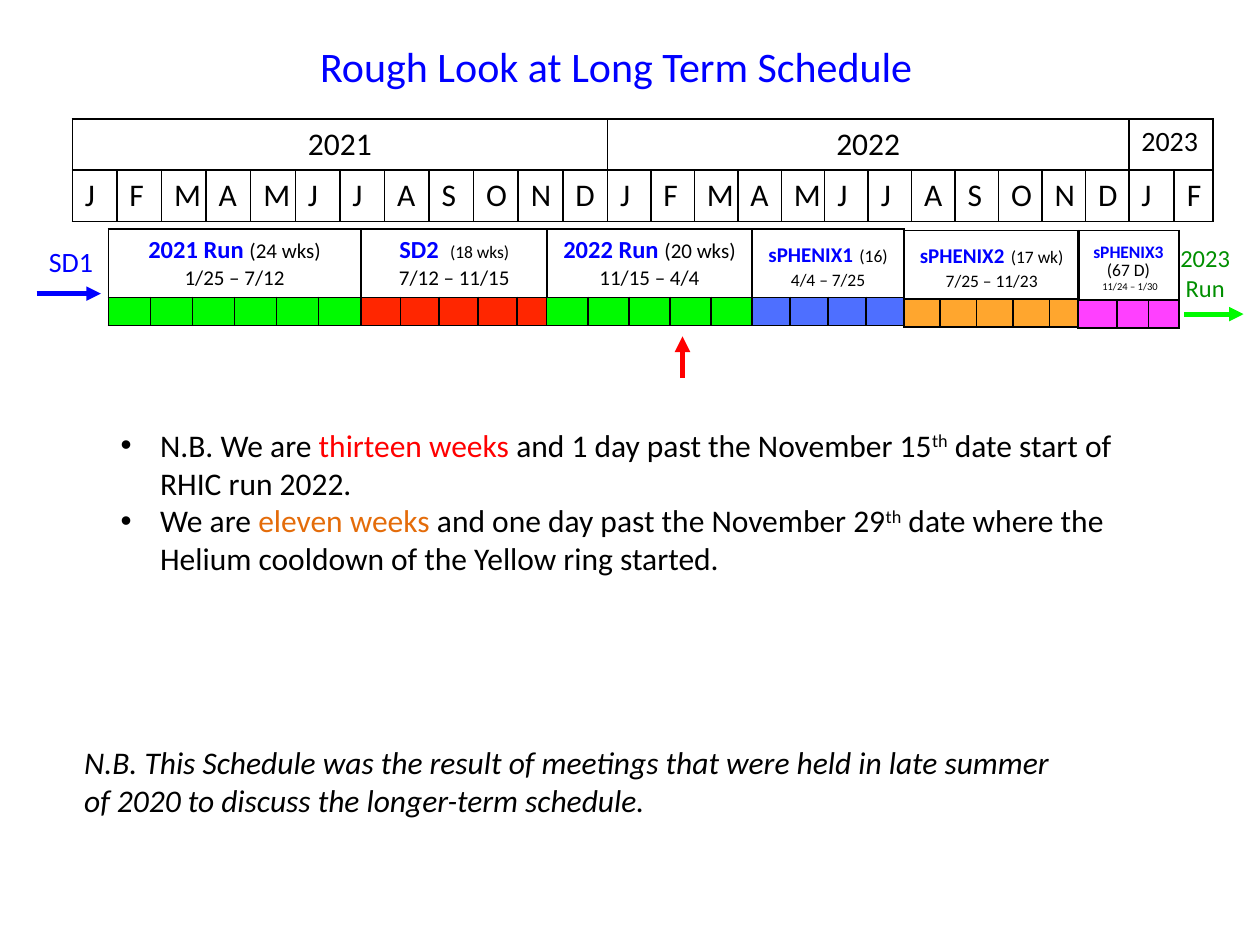
from lxml import etree
from pptx import Presentation
from pptx.dml.color import RGBColor
from pptx.enum.shapes import MSO_CONNECTOR
from pptx.enum.text import MSO_ANCHOR, PP_ALIGN
from pptx.oxml.ns import qn
from pptx.util import Pt

STRAIGHT = MSO_CONNECTOR.STRAIGHT
LEFT, CENTER = PP_ALIGN.LEFT, PP_ALIGN.CENTER
MIDDLE = MSO_ANCHOR.MIDDLE

THEME = {
    "font": "Calibri",
    "colors": {
        "black": "000000", "blue": "0000FF", "red": "FF0000",
        "orange": "E46C0A", "dark green": "008F00", "run": "00FA00",
        "shutdown": "FF2600", "sphenix1": "0432FF", "sphenix2": "FF9300",
        "sphenix3": "FF40FF",
    },
    "sizes": {
        "title": 24, "body": 18, "label": 16, "heading": 14,
        "detail": 12, "small": 10, "space": 8, "tiny": 6,
    },
}
COLORS = {name: RGBColor.from_string(value) for name, value in THEME["colors"].items()}
SIZES = {name: Pt(value) for name, value in THEME["sizes"].items()}


def write(text_frame, lines, paragraph_format):
    for index, runs in enumerate(lines):
        paragraph = text_frame.paragraphs[0] if index == 0 else text_frame.add_paragraph()
        for name, value in paragraph_format.items():
            setattr(paragraph, name, value)
        for text, size, color, *styles in runs:
            run = paragraph.add_run()
            run.text = text
            font_format = {
                "name": THEME["font"], "size": SIZES[size],
                "bold": "bold" in styles, "italic": "italic" in styles,
            }
            for name, value in font_format.items():
                setattr(run.font, name, value)
            run.font.color.rgb = COLORS[color]
            if "superscript" in styles:
                run.font._element.set("baseline", "30000")


def add_grid(left, top, widths, heights):
    table = slide.shapes.add_table(
        len(heights), len(widths), Pt(left), Pt(top), Pt(sum(widths)), Pt(sum(heights))
    ).table
    table.first_row = table.horz_banding = False
    for column, width in zip(table.columns, widths):
        column.width = Pt(width)
    for row, height in zip(table.rows, heights):
        row.height = Pt(height)
    for cell in table.iter_cells():
        properties = cell._tc.get_or_add_tcPr()
        for side in ("a:lnL", "a:lnR", "a:lnT", "a:lnB"):
            border = etree.SubElement(properties, qn(side), w=str(Pt(1)))
            fill = etree.SubElement(border, qn("a:solidFill"))
            etree.SubElement(fill, qn("a:srgbClr"), val=THEME["colors"]["black"])
        cell.fill.background()
    return table


presentation = Presentation()
presentation.slide_width, presentation.slide_height = Pt(720), Pt(540)
slide = presentation.slides.add_slide(presentation.slide_layouts[5])

title = slide.shapes.title
title_format = {"left": Pt(175.7), "top": Pt(19.4), "width": Pt(369.4), "height": Pt(36)}
for name, value in title_format.items():
    setattr(title, name, value)
title.text_frame.vertical_anchor = MIDDLE
write(title.text_frame, [[("Rough Look at Long Term Schedule", "title", "blue")]], {"alignment": LEFT})

months = "JFMAMJJASOND" * 2 + "JF"
calendar = add_grid(41.3, 67.9, [25.5] * 12 + [24.85] * 12 + [25.9, 22.3], [29.3, 29.3])
for year, first, last, size, alignment in [
    ("2021", 0, 11, "body", CENTER),
    ("2022", 12, 23, "body", CENTER),
    ("2023", 24, 25, "label", LEFT),
]:
    cell = calendar.cell(0, first)
    cell.merge(calendar.cell(0, last))
    write(cell.text_frame, [[(year, size, "black")]], {"alignment": alignment})
for index, month in enumerate(months):
    write(calendar.cell(1, index).text_frame, [[(month, "body", "black")]], {"alignment": LEFT})

periods = [
    (61.9, 131, [24.05] * 6, "run", 100, 1, [
        [("2021 Run ", "heading", "blue", "bold"), ("(24 wks)", "detail", "black")],
        [("1/25 – 7/12", "detail", "black")]]),
    (206.6, 131, [22.2] * 4 + [16.9], "shutdown", 100, 1, [
        [("SD2  ", "heading", "blue", "bold"), ("(18 wks)", "small", "black")],
        [("7/12 – 11/15", "detail", "black")]]),
    (312.4, 131, [23.5] * 5, "run", 100, 1, [
        [("2022 Run ", "heading", "blue", "bold"), ("(20 wks)", "detail", "black")],
        [("11/15 – 4/4", "detail", "black")]]),
    (429.8, 131, [21.7] * 4, "sphenix1", 70, 1, [
        [("sPHENIX1", "detail", "blue", "bold"), (" ", "label", "blue"), ("(16)", "small", "black")],
        [("4/4 – 7/25", "small", "black")]]),
    (516.5, 131.8, [20.8] * 4 + [16.6], "sphenix2", 82, 1, [
        [("sPHENIX2", "detail", "blue", "bold"), (" ", "label", "blue"), ("(17 wk)", "small", "black")],
        [("7/25 – 11/23", "small", "black")]]),
    (616, 131.8, [22.4, 18, 16.8], "sphenix3", 100, 0.78, [
        [("sPHENIX3", "small", "blue", "bold"), (" ", "label", "blue")],
        [("(67 D)", "small", "black")],
        [(" ", "space", "black"), ("11/24 – 1/30", "tiny", "black")]]),
]
for left, top, widths, color, opacity, spacing, lines in periods:
    period = add_grid(left, top, widths, [39, 16])
    heading = period.cell(0, 0)
    heading.merge(period.cell(0, len(widths) - 1))
    write(heading.text_frame, lines, {"alignment": CENTER, "line_spacing": spacing})
    for column in range(len(widths)):
        cell = period.cell(1, column)
        cell.margin_top = cell.margin_bottom = 0
        cell.text_frame.paragraphs[0].font.size = SIZES["space"]
        cell.fill.solid()
        cell.fill.fore_color.rgb = COLORS[color]
        if opacity < 100:
            for tint in cell._tc.tcPr.findall(qn("a:solidFill") + "/" + qn("a:srgbClr")):
                etree.SubElement(tint, qn("a:alpha"), val=str(opacity * 1000))

for start_x, start_y, end_x, end_y, color, weight in [
    (20.9, 167.8, 57.6, 167.8, "blue", 2.75),
    (676.8, 179.5, 710.6, 179.5, "run", 2.75),
    (390, 216, 390, 192.2, "red", 3),
]:
    arrow = slide.shapes.add_connector(STRAIGHT, Pt(start_x), Pt(start_y), Pt(end_x), Pt(end_y))
    arrow.line.color.rgb = COLORS[color]
    arrow.line.width = Pt(weight)
    etree.SubElement(arrow.line._get_or_add_ln(), qn("a:tailEnd"), type="triangle")
    etree.SubElement(arrow._element.spPr, qn("a:effectLst"))

notes = [
    [("N.B. We are ", "body", "black"), ("thirteen weeks ", "body", "red"),
     ("and 1 day past the November 15", "body", "black"), ("th", "body", "black", "superscript"),
     (" date start of RHIC run 2022.", "body", "black")],
    [("We are ", "body", "black"), ("eleven weeks ", "body", "orange"),
     ("and one day past the November 29", "body", "black"), ("th", "body", "black", "superscript"),
     (" date where the Helium cooldown of the Yellow ring started.", "body", "black")],
]
remark = ("N.B. This Schedule was the result of meetings that were held in late summer "
          "of 2020 to discuss the longer-term schedule.")
for left, top, width, height, wrap, alignment, bulleted, lines in [
    (20.9, 136.1, 40.3, 26.6, False, LEFT, False, [[("SD1", "label", "blue")]]),
    (662.4, 135.4, 52.6, 41, True, CENTER, False,
     [[("2023", "heading", "dark green")], [("Run", "heading", "dark green")]]),
    (61.9, 239.8, 582.5, 94.3, True, LEFT, True, notes),
    (41, 421.2, 584.6, 51.1, True, LEFT, False, [[(remark, "body", "black", "italic")]]),
]:
    shape = slide.shapes.add_textbox(Pt(left), Pt(top), Pt(width), Pt(height))
    shape.text_frame.word_wrap = wrap
    write(shape.text_frame, lines, {"alignment": alignment})
    if bulleted:
        for paragraph in shape.text_frame.paragraphs:
            properties = paragraph._p.get_or_add_pPr()
            properties.set("marL", str(Pt(22.5)))
            properties.set("indent", str(-Pt(22.5)))
            etree.SubElement(properties, qn("a:buFont"), typeface="Arial")
            etree.SubElement(properties, qn("a:buChar"), char="•")

presentation.save("out.pptx")
